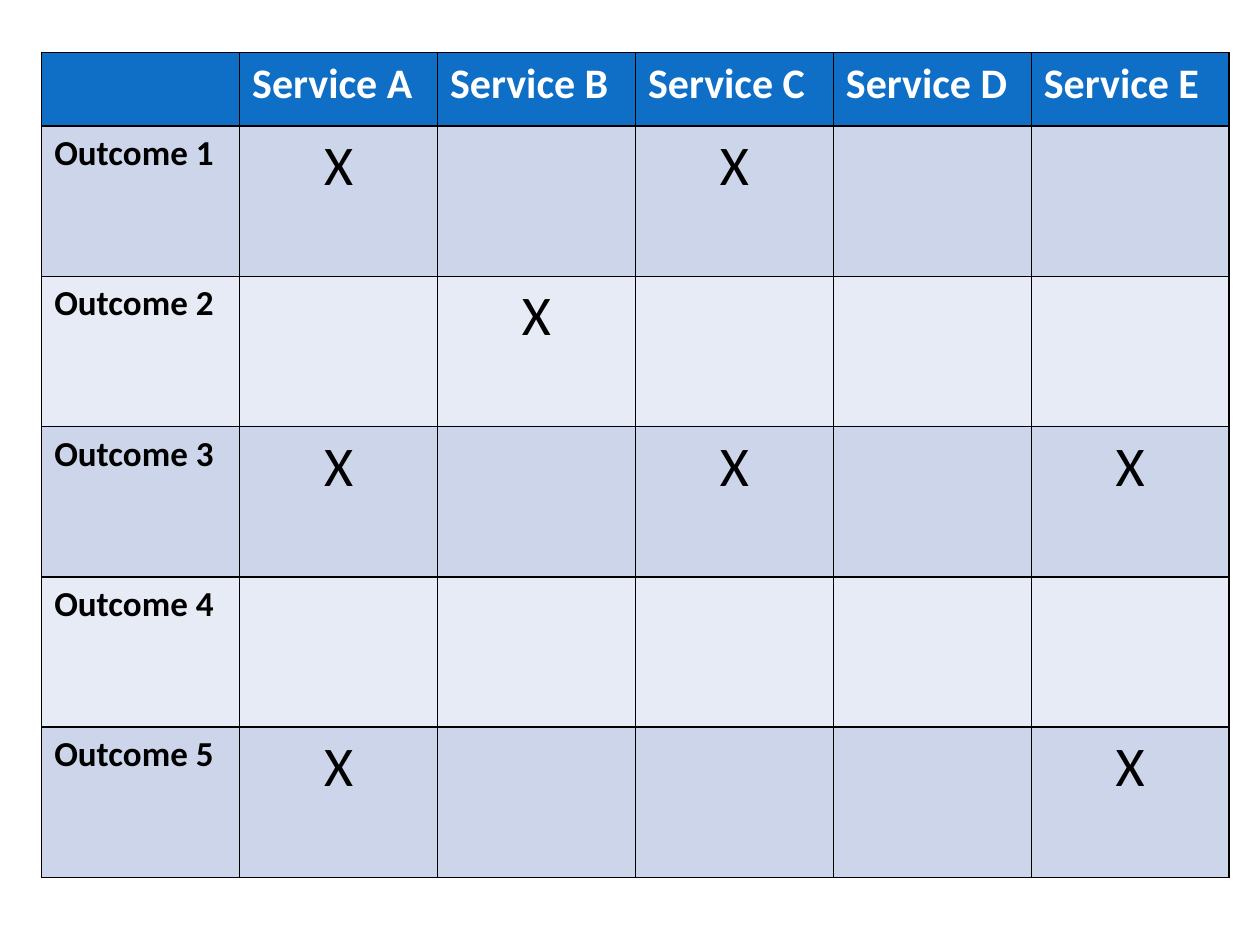
from dataclasses import dataclass

import pptx
import pptx.dml.color
import pptx.enum.text
import pptx.oxml
import pptx.oxml.ns
import pptx.util

Cm = pptx.util.Cm
RGBColor = pptx.dml.color.RGBColor
Align = pptx.enum.text.PP_ALIGN

BLACK = RGBColor(0x00, 0x00, 0x00)
WHITE = RGBColor(0xFF, 0xFF, 0xFF)
HEADER_BLUE = RGBColor(0x0F, 0x6F, 0xC6)
BAND_DARK = RGBColor(0xCC, 0xD5, 0xEA)
BAND_LIGHT = RGBColor(0xE7, 0xEB, 0xF5)

FONT = "Calibri"
SERVICES = "ABCDE"
SERVICES_BY_OUTCOME = ["AC", "B", "ACE", "", "AE"]
COLUMN_WIDTH = Cm(3.99)
HEADER_HEIGHT = Cm(1.48)
OUTCOME_HEIGHT = Cm(3.03)


@dataclass(frozen=True)
class CellStyle:
    size: int
    color: RGBColor
    bold: bool
    align: Align


HEADER = CellStyle(24, WHITE, True, Align.LEFT)
OUTCOME = CellStyle(20, BLACK, True, Align.LEFT)
MARK = CellStyle(32, BLACK, False, Align.CENTER)


def add_borders(cell, color: RGBColor = BLACK, width: int = pptx.util.Pt(1)) -> None:
    properties = cell._tc.get_or_add_tcPr()
    for side in ("lnL", "lnR", "lnT", "lnB"):
        properties.append(pptx.oxml.parse_xml(
            f'<a:{side} {pptx.oxml.ns.nsdecls("a")} w="{width}"><a:solidFill>'
            f'<a:srgbClr val="{color}"/></a:solidFill></a:{side}>'))


def fill_cell(cell, text: str, style: CellStyle, background: RGBColor) -> None:
    add_borders(cell)
    cell.fill.solid()
    cell.fill.fore_color.rgb = background
    cell.text_frame.text = text
    para = cell.text_frame.paragraphs[0]
    para.alignment = style.align
    para.font.size = pptx.util.Pt(style.size)
    for span in para.runs:
        span.font.name = FONT
        span.font.size = pptx.util.Pt(style.size)
        span.font.bold = style.bold
        span.font.color.rgb = style.color


def add_matrix(page) -> None:
    row_count = len(SERVICES_BY_OUTCOME) + 1
    column_count = len(SERVICES) + 1
    table = page.shapes.add_table(
        row_count, column_count, Cm(0.84), Cm(1.06), COLUMN_WIDTH * column_count,
        HEADER_HEIGHT + OUTCOME_HEIGHT * len(SERVICES_BY_OUTCOME)).table
    for column in table.columns:
        column.width = COLUMN_WIDTH
    for row in table.rows:
        row.height = OUTCOME_HEIGHT
    table.rows[0].height = HEADER_HEIGHT

    # Header row
    titles = [""] + [f"Service {service}" for service in SERVICES]
    for column, title in enumerate(titles):
        fill_cell(table.cell(0, column), title, HEADER, HEADER_BLUE)

    # Outcome rows in alternating bands
    for row, marked in enumerate(SERVICES_BY_OUTCOME, start=1):
        band = BAND_DARK if row % 2 else BAND_LIGHT
        fill_cell(table.cell(row, 0), f"Outcome {row}", OUTCOME, band)
        for column, service in enumerate(SERVICES, start=1):
            mark = "X" if service in marked else ""
            fill_cell(table.cell(row, column), mark, MARK, band)


def main() -> None:
    deck = pptx.Presentation()
    deck.slide_width = Cm(25.4)
    deck.slide_height = Cm(19.05)
    page = deck.slides.add_slide(deck.slide_layouts[6])
    add_matrix(page)
    deck.save("out.pptx")


if __name__ == "__main__":
    main()
